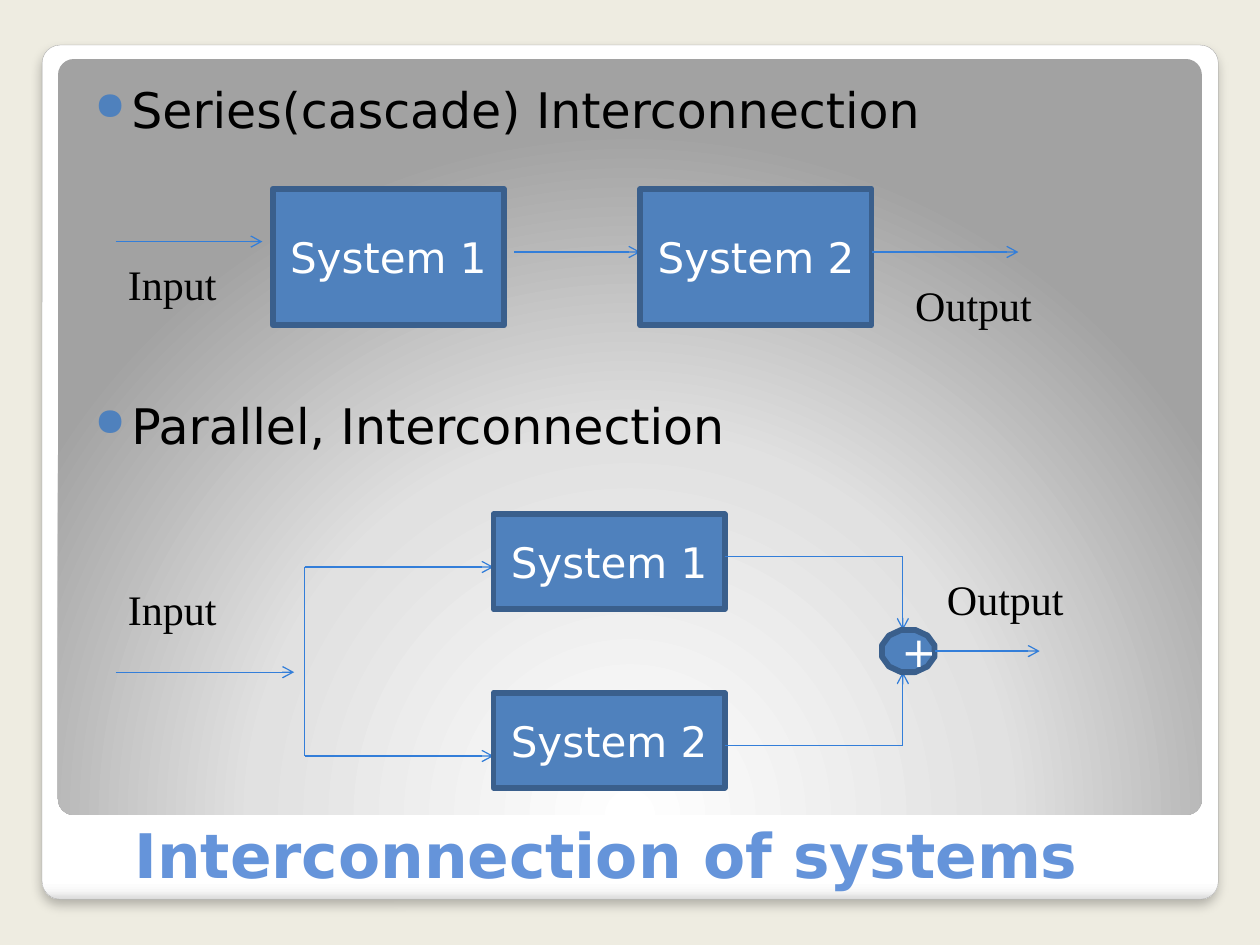
from dataclasses import dataclass

from lxml.etree import SubElement
from pptx import Presentation
from pptx.dml.color import RGBColor
from pptx.enum.shapes import MSO_CONNECTOR as Link, MSO_SHAPE as Shape
from pptx.enum.text import MSO_ANCHOR as Anchor, PP_ALIGN as Align
from pptx.oxml import parse_xml
from pptx.oxml.ns import nsdecls, qn
from pptx.util import Cm, Pt


@dataclass(frozen=True)
class Theme:
    backdrop: str = "EEECE1"
    frame_edge: str = "A4A4A4"
    block: str = "4F81BD"
    block_edge: str = "3A5F8C"
    block_text: str = "FFFFFF"
    wire: str = "337ED9"
    title: str = "6594DA"
    ink: str = "000000"
    sans: str = "DejaVu Sans"
    serif: str = "Times New Roman"
    title_size: float = 35.1
    heading_size: float = 28
    label_size: float = 24
    frame_stops: tuple = ((0, "FFFFFF"), (98, "FFFFFF"), (99, "F7F7F7"), (100, "DADADA"))
    panel_stops: tuple = ((0, "FFFFFF"), (55, "E1E1E1"), (100, "A2A2A2"))


def rgb(color):
    return RGBColor.from_string(color)


def add_xml(parent, tag, **attributes):
    return SubElement(parent, qn(tag), {key: str(value) for key, value in attributes.items()})


class Diagram:
    """Draws themed elements on one slide; all lengths are in centimetres."""

    def __init__(self, slide, theme):
        self.slide = slide
        self.theme = theme
        slide.background.fill.solid()
        slide.background.fill.fore_color.rgb = rgb(theme.backdrop)

    def shape(self, kind, left, top, width, height):
        shape = self.slide.shapes.add_shape(kind, Cm(left), Cm(top), Cm(width), Cm(height))
        shape.shadow.inherit = False
        return shape

    def set_text(self, paragraph, text, size, color, font, bold=False):
        paragraph.text = text
        style = paragraph.runs[0].font
        style.size, style.name, style.bold = Pt(size), font, bold
        style.color.rgb = rgb(color)

    def card(self, left, top, width, height, stops, direction):
        """Rounded rectangle with a gradient; direction is the XML that closes the gradient."""
        card = self.shape(Shape.ROUNDED_RECTANGLE, left, top, width, height)
        card.adjustments[0] = 0.021
        card.line.fill.background()
        card.fill.background()
        gradient = parse_xml(
            f'<a:gradFill {nsdecls("a")} rotWithShape="1"><a:gsLst/>{direction}</a:gradFill>')
        for position, color in stops:
            stop = add_xml(gradient[0], "a:gs", pos=position * 1000)
            add_xml(stop, "a:srgbClr", val=color)
        properties = card._element.spPr
        properties.replace(properties.find(qn("a:noFill")), gradient)
        return card

    def frame(self, left, top, width, height):
        frame = self.card(left, top, width, height, self.theme.frame_stops,
                          '<a:lin ang="5400000" scaled="0"/>')
        frame.line.color.rgb = rgb(self.theme.frame_edge)
        frame.line.width = Pt(0.16)
        effects = frame._element.spPr.find(qn("a:effectLst"))
        shadow = add_xml(effects, "a:outerShdw", blurRad=Pt(6), dist=Pt(4),
                         dir=5400000, algn="t", rotWithShape=0)
        tint = add_xml(shadow, "a:srgbClr", val=self.theme.ink)
        add_xml(tint, "a:alpha", val=25000)

    def panel(self, left, top, width, height):
        self.card(left, top, width, height, self.theme.panel_stops,
                  '<a:path path="circle">'
                  '<a:fillToRect l="50000" t="175000" r="50000" b="-75000"/></a:path>')

    def text(self, left, top, width, height, wrap=True):
        box = self.slide.shapes.add_textbox(Cm(left), Cm(top), Cm(width), Cm(height))
        box.text_frame.word_wrap = wrap
        return box.text_frame

    def title(self, text, left, top, width, height):
        paragraph = self.text(left, top, width, height).paragraphs[0]
        paragraph.alignment, paragraph.line_spacing = Align.CENTER, 0.9
        self.set_text(paragraph, text, self.theme.title_size, self.theme.title,
                      self.theme.sans, bold=True)

    def heading(self, text, left, top, width, height):
        frame = self.text(left, top, width, height)
        frame.margin_left = Cm(0.51)
        paragraph = frame.paragraphs[0]
        self.set_text(paragraph, text, self.theme.heading_size, self.theme.ink, self.theme.sans)
        paragraph.space_before = Pt(2.5)
        properties = paragraph._p.get_or_add_pPr()
        properties.set("marL", str(Cm(0.74)))
        properties.set("indent", str(-Cm(0.74)))
        add_xml(add_xml(properties, "a:buClr"), "a:srgbClr", val=self.theme.block)
        add_xml(properties, "a:buSzPct", val=80000)
        add_xml(properties, "a:buChar", char="●")

    def label(self, text, left, top, width):
        frame = self.text(left, top, width, 1.3, wrap=False)
        self.set_text(frame.paragraphs[0], text, self.theme.label_size,
                      self.theme.ink, self.theme.serif)

    def block(self, text, left, top, width, height, kind=Shape.RECTANGLE):
        block = self.shape(kind, left, top, width, height)
        block.fill.solid()
        block.fill.fore_color.rgb = rgb(self.theme.block)
        block.line.color.rgb = rgb(self.theme.block_edge)
        block.line.width = Pt(3.35)
        block.text_frame.vertical_anchor = Anchor.MIDDLE
        paragraph = block.text_frame.paragraphs[0]
        paragraph.alignment = Align.CENTER
        self.set_text(paragraph, text, self.theme.label_size,
                      self.theme.block_text, self.theme.sans)

    def wire(self, x1, y1, x2, y2, arrow=True):
        wire = self.slide.shapes.add_connector(Link.STRAIGHT, Cm(x1), Cm(y1), Cm(x2), Cm(y2))
        wire.line.color.rgb = rgb(self.theme.wire)
        wire.line.width = Pt(0.75)
        properties = wire._element.spPr
        if arrow:
            add_xml(properties.find(qn("a:ln")), "a:tailEnd", type="arrow")
        add_xml(properties, "a:effectLst")


INPUT_X = 2.33
BLOCK_WIDTH = 4.66


def draw_series(diagram):
    first, second, top, height, flow = 5.5, 12.91, 3.81, 2.75, 5.08
    output = second + BLOCK_WIDTH
    diagram.heading("Series(cascade) Interconnection", 1.4, 1.47, 22.73, 1.5)
    diagram.wire(INPUT_X, 4.87, 5.29, 4.87)
    diagram.block("System 1", first, top, BLOCK_WIDTH, height)
    diagram.wire(10.37, flow, second, flow)
    diagram.block("System 2", second, top, BLOCK_WIDTH, height)
    diagram.wire(output, flow, 20.53, flow)
    diagram.label("Input", INPUT_X, 5.08, 2.31)
    diagram.label("Output", 18.2, 5.5, 2.9)


def draw_parallel(diagram):
    split, block_left, join = 6.14, 9.95, 18.2
    sum_left, sum_top, sum_width, sum_height = 17.78, 12.7, 1.06, 0.85
    sum_right, sum_bottom = sum_left + sum_width, sum_top + sum_height
    sum_middle = sum_top + sum_height / 2
    upper_entry, lower_entry = 11.43, 15.24
    branches = (
        ("System 1", 10.37, upper_entry, 11.22, sum_top),
        ("System 2", 13.97, lower_entry, 15.03, sum_bottom),
    )
    diagram.heading("Parallel, Interconnection", 1.4, 7.84, 22.73, 1.5)
    diagram.wire(INPUT_X, sum_bottom, 5.93, sum_bottom)
    diagram.wire(split, upper_entry, split, lower_entry, arrow=False)
    for system, top, entry, leave, sum_edge in branches:
        diagram.wire(split, entry, block_left, entry)
        diagram.block(system, block_left, top, BLOCK_WIDTH, 1.91)
        diagram.wire(block_left + BLOCK_WIDTH, leave, join, leave, arrow=False)
        diagram.wire(join, leave, join, sum_edge)
    diagram.block("+", sum_left, sum_top, sum_width, sum_height, Shape.DODECAGON)
    diagram.wire(sum_right, sum_middle, 20.96, sum_middle)
    diagram.label("Input", INPUT_X, 11.64, 2.31)
    diagram.label("Output", sum_right, 11.43, 2.9)


def main():
    deck = Presentation()
    deck.slide_width, deck.slide_height = Cm(25.4), Cm(19.05)
    diagram = Diagram(deck.slides.add_slide(deck.slide_layouts[6]), Theme())
    diagram.frame(0.85, 0.91, 23.71, 17.22)
    diagram.panel(1.17, 1.19, 23.06, 15.24)
    diagram.title("Interconnection of systems", 0.85, 16.51, 22.73, 1.65)
    draw_series(diagram)
    draw_parallel(diagram)
    deck.save("out.pptx")


if __name__ == "__main__":
    main()
